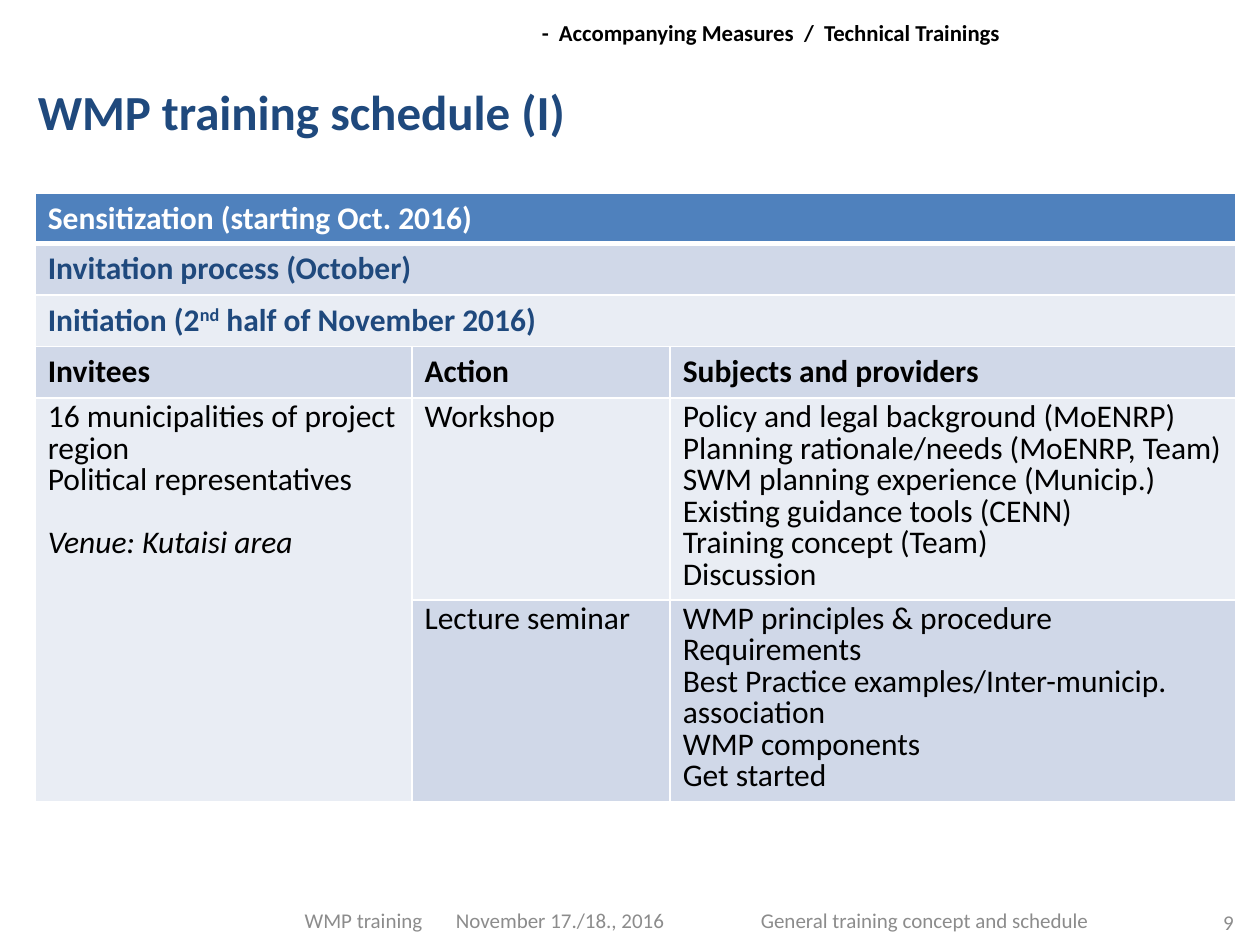
"""Build the WMP training schedule slide."""
from lxml import etree
from pptx import Presentation
from pptx.dml import color
from pptx.enum import text
from pptx.oxml import ns
from pptx.util import Inches, Pt

FONT = "Calibri"
BLACK, WHITE, NAVY, GREY = "000000", "FFFFFF", "1F497D", "8C8C8C"
HEADER, BAND_DARK, BAND_LIGHT = "4F81BD", "D0D8E8", "E9EDF4"
COLUMN_WIDTHS = (2.99, 2.05, 4.49)
ROW_HEIGHTS = (0.4, 0.41, 0.41, 0.41, 1.6, 1.6)

BANNERS = (
    (["Sensitization (starting Oct. 2016)"], WHITE, HEADER),
    (["Invitation process (October)"], NAVY, BAND_DARK),
    (["Initiation (2", "nd", " half of November 2016)"], NAVY, BAND_LIGHT),
)
HEADINGS = ("Invitees", "Action", "Subjects and providers")
INVITEES = ("16 municipalities of project region", "Political representatives")
VENUE = "Venue: Kutaisi area"
SESSIONS = (
    ("Workshop", BAND_LIGHT, (
        "Policy and legal background (MoENRP)",
        "Planning rationale/needs (MoENRP, Team)",
        "SWM planning experience (Municip.)",
        "Existing guidance tools (CENN)",
        "Training concept (Team)",
        "Discussion",
    )),
    ("Lecture seminar", BAND_DARK, (
        "WMP principles & procedure",
        "Requirements",
        "Best Practice examples/Inter-municip. association",
        "WMP components",
        "Get started",
    )),
)


def rgb(value):
    """Return a colour from a hex string."""
    return color.RGBColor.from_string(value)


def add_span(para, words, size, colour, bold=False, italic=False):
    """Add one formatted run to a paragraph."""
    span = para.add_run()
    span.text = words
    span.font.name, span.font.size = FONT, Pt(size)
    span.font.bold, span.font.italic = bold, italic
    span.font.color.rgb = rgb(colour)
    return span


def place(shape, left, top, width, height):
    """Move and size a shape in inches."""
    shape.left, shape.top = Inches(left), Inches(top)
    shape.width, shape.height = Inches(width), Inches(height)


def add_title(page, words):
    """Fill and format the title placeholder."""
    title = page.shapes.title
    place(title, 0.2, 0.6, 9.69, 0.53)
    frame = title.text_frame
    frame.vertical_anchor = text.MSO_ANCHOR.TOP
    para = frame.paragraphs[0]
    para.alignment = text.PP_ALIGN.LEFT
    add_span(para, words, 28, NAVY, bold=True)


def add_header(page, words):
    """Add the section line at the top of the page."""
    box = page.shapes.add_textbox(Inches(4.22), Inches(0.11), Inches(3.98), Inches(0.31))
    box.fill.solid()
    box.fill.fore_color.rgb = rgb(WHITE)
    frame = box.text_frame
    frame.word_wrap = True
    frame.margin_left = Inches(0.08)
    frame.margin_right = frame.margin_top = frame.margin_bottom = Inches(0.04)
    add_span(frame.paragraphs[0], words, 13, BLACK, bold=True)


def add_footer(page, words, left, top, width, align=text.PP_ALIGN.LEFT, tab=None):
    """Add a grey footer text with an optional tab stop."""
    box = page.shapes.add_textbox(Inches(left), Inches(top), Inches(width), Inches(0.4))
    frame = box.text_frame
    frame.word_wrap = True
    frame.vertical_anchor = text.MSO_ANCHOR.MIDDLE
    para = frame.paragraphs[0]
    para.alignment = align
    if tab:
        stops = etree.SubElement(para._p.get_or_add_pPr(), ns.qn("a:tabLst"))
        etree.SubElement(stops, ns.qn("a:tab"), pos=str(Inches(tab)), algn="l")
    add_span(para, words, 12, GREY)


def style_cell(cell, fill, top=1, bottom=1):
    """Give a cell its white borders and its fill."""
    properties = cell._tc.get_or_add_tcPr()
    for side, width in (("L", 1), ("R", 1), ("T", top), ("B", bottom)):
        line = etree.SubElement(properties, ns.qn(f"a:ln{side}"), w=str(Pt(width)))
        solid = etree.SubElement(line, ns.qn("a:solidFill"))
        etree.SubElement(solid, ns.qn("a:srgbClr"), val=WHITE)
    cell.fill.solid()
    cell.fill.fore_color.rgb = rgb(fill)


def add_lines(cell, lines):
    """Write each line as a paragraph with fixed line spacing."""
    frame = cell.text_frame
    for index, words in enumerate(lines):
        para = frame.add_paragraph() if index else frame.paragraphs[0]
        para.line_spacing = Pt(18)
        add_span(para, words, 18, BLACK)


def add_banner(table, row, parts, colour, fill):
    """Write a full-width row, with its second part raised."""
    for cell in table.rows[row].cells:
        style_cell(cell, fill, 3 if row == 1 else 1, 3 if row == 0 else 1)
    table.cell(row, 0).merge(table.cell(row, len(COLUMN_WIDTHS) - 1))
    para = table.cell(row, 0).text_frame.paragraphs[0]
    for index, words in enumerate(parts):
        span = add_span(para, words, 18, colour, bold=True)
        if index == 1:
            span._r.get_or_add_rPr().set("baseline", "30000")


def add_schedule(page):
    """Add the training schedule table."""
    frame = page.shapes.add_table(
        len(ROW_HEIGHTS), len(COLUMN_WIDTHS), Inches(0.28), Inches(1.53),
        Inches(sum(COLUMN_WIDTHS)), Inches(sum(ROW_HEIGHTS)))
    table = frame.table
    for column, width in zip(table.columns, COLUMN_WIDTHS):
        column.width = Inches(width)
    for row, height in zip(table.rows, ROW_HEIGHTS):
        row.height = Inches(height)

    for row, banner in enumerate(BANNERS):
        add_banner(table, row, *banner)

    heading_row = len(BANNERS)
    for column, words in enumerate(HEADINGS):
        cell = table.cell(heading_row, column)
        style_cell(cell, BAND_DARK)
        add_span(cell.text_frame.paragraphs[0], words, 18, BLACK, bold=True)

    first = heading_row + 1
    for row, (action, fill, subjects) in enumerate(SESSIONS, first):
        style_cell(table.cell(row, 0), BAND_LIGHT)
        for column, lines in ((1, [action]), (2, subjects)):
            style_cell(table.cell(row, column), fill)
            add_lines(table.cell(row, column), lines)

    invitees = table.cell(first, 0)
    invitees.merge(table.cell(first + len(SESSIONS) - 1, 0))
    add_lines(invitees, INVITEES)
    venue = invitees.text_frame.add_paragraph()
    venue.line_spacing = venue.space_before = Pt(18)
    add_span(venue, VENUE, 18, BLACK, italic=True)


def main():
    """Build and save the deck."""
    deck = Presentation()
    deck.slide_width, deck.slide_height = Inches(10), Inches(7.5)
    page = deck.slides.add_slide(deck.slide_layouts[5])
    add_header(page, "-  Accompanying Measures  /  Technical Trainings")
    add_title(page, "WMP training schedule (I)")
    add_schedule(page)
    add_footer(page, "WMP training\tNovember 17./18., 2016", 2.32, 7.1, 3.07, tab=1.2)
    add_footer(page, "General training concept and schedule", 5.94, 7.1, 3.31)
    add_footer(page, "9", 9.02, 7.12, 0.87, text.PP_ALIGN.RIGHT)
    deck.save("out.pptx")


if __name__ == "__main__":
    main()
